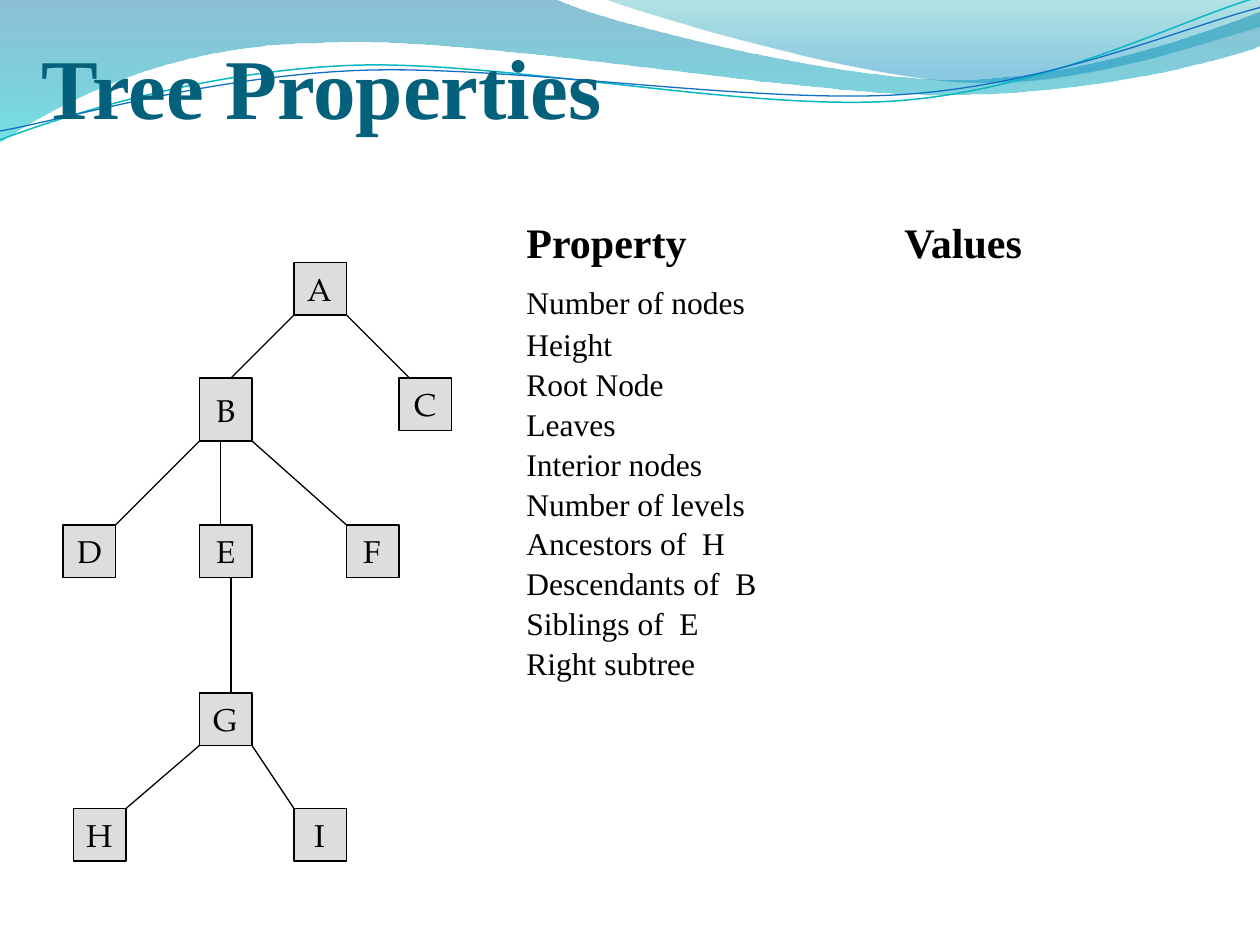
from collections import namedtuple
from dataclasses import dataclass

from lxml import etree
from pptx import Presentation
from pptx.dml.color import RGBColor
from pptx.enum.shapes import MSO_CONNECTOR as Conn, MSO_SHAPE as Shape
from pptx.enum.text import MSO_ANCHOR as Anchor, PP_ALIGN as Align
from pptx.oxml.ns import qn
from pptx.util import Inches, Pt

Box = namedtuple("Box", "left top width height")


@dataclass(frozen=True)
class Theme:
    title: str = "04617B"
    ink: str = "000000"
    node: str = "DDDDDD"
    teal: str = "0AB8BF"
    blue: str = "0F6FC6"
    serif: str = "Times New Roman"
    node_font: str = "TeX Gyre Pagella"
    title_size: float = 48.6
    head_size: float = 24
    body_size: float = 18
    hairline: float = 0.75


T = Theme()

# Each wave: start point, then curves (three points) or straight lines (one point).
# Each gradient stop: position, colour and opacity in percent.
BANDS = [
    ([(0, "0074A1", 45), (1, "00C6CF", 55)], (0, -0.01), [
        [(4.4, -0.01)],
        [(4.76, 0.17), (6.64, 0.63), (7.58, 0.63)],
        [(8.53, 0.63), (9.58, 0.26), (10, 0.09)],
        [(10.01, 0.36)],
        [(9.83, 0.44), (8.7, 0.76), (7.46, 0.75)],
        [(6.22, 0.75), (3.82, 0.28), (2.57, 0.34)],
        [(1.29, 0.35), (0.46, 0.83), (-0.01, 1.13)]]),
    ([(0, "00A1A9", 30), (0.8, "008BBF", 45)], (4.79, -0.01), [
        [(5.09, 0.11), (6.82, 0.62), (7.69, 0.65)],
        [(8.56, 0.69), (9.61, 0.32), (10, 0.21)],
        [(10, 0)]]),
]
STRANDS = [
    (T.teal, 0.85, (0, 1.11), [
        [(0.48, 0.93), (1.58, 0.57), (2.77, 0.52)],
        [(3.95, 0.47), (5.93, 0.89), (7.13, 0.8)],
        [(8.33, 0.71), (9.38, 0.15), (9.98, -0.02)]]),
    (T.blue, 0.75, (0, 1.04), [
        [(0.47, 0.96), (1.64, 0.61), (2.83, 0.56)],
        [(4.03, 0.51), (5.97, 0.83), (7.17, 0.75)],
        [(8.36, 0.67), (9.41, 0.21), (10, 0.06)]]),
]

# Tree grid in twelfths of an inch: column, row, height.
GRID_WIDTH, GRID_HEIGHT, SIDE = 37, 57, 5
NODES = {
    "A": (22, 0, 5), "B": (13, 11, 6), "C": (32, 11, 5),
    "D": (0, 25, 5), "E": (13, 25, 5), "F": (27, 25, 5),
    "G": (13, 41, 5), "H": (1, 52, 5), "I": (22, 52, 5),
}
# Parent, child, and how far along each one's edge the line is attached.
EDGES = [
    ("A", "B", 0, 3), ("A", "C", 5, 1),
    ("B", "D", 0, 5), ("B", "E", 2, 2), ("B", "F", 5, 0),
    ("E", "G", 3, 3), ("G", "H", 0, 5), ("G", "I", 5, 0),
]

PROPERTIES = [
    "Number of nodes", "Height", "Root Node", "Leaves", "Interior nodes",
    "Number of levels", "Ancestors of  H", "Descendants of  B",
    "Siblings of  E", "Right subtree",
]


def rgb(value):
    return RGBColor.from_string(value)


def write(p, text, size=T.body_size, color=T.ink, font=T.serif, bold=False,
          align=Align.LEFT, before=0, spacing=1.0):
    p.alignment = align
    p.space_before = Pt(before)
    p.line_spacing = spacing
    r = p.add_run()
    r.text = text
    r.font.size, r.font.name, r.font.bold = Pt(size), font, bold
    r.font.color.rgb = rgb(color)


def add_text_box(s, box, anchor, inset):
    tf = s.shapes.add_textbox(*box).text_frame
    tf.word_wrap = True
    tf.vertical_anchor = anchor
    tf.margin_left = tf.margin_right = inset
    return tf


def add_wave(s, box, start, segments, close):
    """Add an outline whose three-point segments are cubic curves."""
    points = [(box.left + Inches(x), box.top + Inches(y))
              for x, y in [start, *sum(segments, [])]]
    fb = s.shapes.build_freeform(*points[0])
    fb.add_line_segments(points[1:], close=close)
    sp = fb.convert_to_shape()
    sp.shadow.inherit = False
    lines = iter(list(sp._element.spPr.iter(qn("a:lnTo"))))
    for seg in segments:
        parts = [next(lines) for _ in seg]
        if len(parts) == 3:
            curve = etree.Element(qn("a:cubicBezTo"))
            parts[0].addprevious(curve)
            for part in parts:
                curve.append(part[0])
                part.getparent().remove(part)
    return sp


def add_header_waves(s, box):
    for stops, start, segments in BANDS:
        sp = add_wave(s, box, start, segments, True)
        sp.line.fill.background()
        sp.fill.gradient()
        sp.fill.gradient_angle = 270
        for stop, (position, color, _) in zip(sp.fill.gradient_stops, stops):
            stop.position = position
            stop.color.rgb = rgb(color)
        colors = list(sp._element.spPr.iter(qn("a:srgbClr")))
        for clr, (_, _, opacity) in zip(colors, stops):
            etree.SubElement(clr, qn("a:alpha"), val=str(opacity * 1000))
    for color, width, start, segments in STRANDS:
        sp = add_wave(s, box, start, segments, False)
        sp.fill.background()
        sp.line.color.rgb = rgb(color)
        sp.line.width = Pt(width)


def add_title(s, box):
    tf = add_text_box(s, box, Anchor.BOTTOM, 0)
    tf.margin_bottom = 0
    write(tf.paragraphs[0], "Tree Properties", size=T.title_size,
          color=T.title, bold=True)


def add_node(s, box, label):
    sp = s.shapes.add_shape(Shape.RECTANGLE, *box)
    sp.shadow.inherit = False
    sp.fill.solid()
    sp.fill.fore_color.rgb = rgb(T.node)
    sp.line.color.rgb = rgb(T.ink)
    sp.line.width = Pt(T.hairline)
    tf = sp.text_frame
    tf.word_wrap = False
    tf.vertical_anchor = Anchor.MIDDLE
    write(tf.paragraphs[0], label, font=T.node_font, align=Align.CENTER)


def add_edge(s, x1, y1, x2, y2):
    line = s.shapes.add_connector(Conn.STRAIGHT, x1, y1, x2, y2)
    line.line.color.rgb = rgb(T.ink)
    line.line.width = Pt(T.hairline)
    etree.SubElement(line._element.spPr, qn("a:effectLst"))


def add_tree(s, box):
    unit = box.width / GRID_WIDTH

    def place(col, row):
        return round(box.left + col * unit), round(box.top + row * unit)

    for label, (col, row, height) in NODES.items():
        add_node(s, Box(*place(col, row), round(SIDE * unit), round(height * unit)),
                 label)
    for parent, child, out, into in EDGES:
        col, row, height = NODES[parent]
        child_col, child_row, _ = NODES[child]
        add_edge(s, *place(col + out, row + height),
                 *place(child_col + into, child_row))


def add_property_list(s, box):
    tf = add_text_box(s, box, Anchor.TOP, Inches(0.1))
    head = tf.paragraphs[0]
    write(head, "Property\tValues", size=T.head_size, bold=True)
    tabs = etree.SubElement(head._p.get_or_add_pPr(), qn("a:tabLst"))
    etree.SubElement(tabs, qn("a:tab"), pos=str(Inches(3)), algn="l")
    first, *rest = PROPERTIES
    write(tf.add_paragraph(), first, before=9)
    for name in rest:
        write(tf.add_paragraph(), name, before=9.9, spacing=0.6)


def main():
    prs = Presentation()
    prs.slide_width, prs.slide_height = Inches(10), Inches(7.5)
    s = prs.slides.add_slide(prs.slide_layouts[6])
    add_header_waves(s, Box(0, 0, prs.slide_width, Inches(1.13)))
    add_title(s, Box(Inches(1 / 3), Inches(0.16), Inches(8.5), Inches(0.92)))
    add_tree(s, Box(Inches(0.5), Inches(25 / 12),
                    Inches(GRID_WIDTH / 12), Inches(GRID_HEIGHT / 12)))
    add_property_list(s, Box(Inches(4.08), Inches(1.67), Inches(5.25), Inches(4.09)))
    prs.save("out.pptx")


if __name__ == "__main__":
    main()
